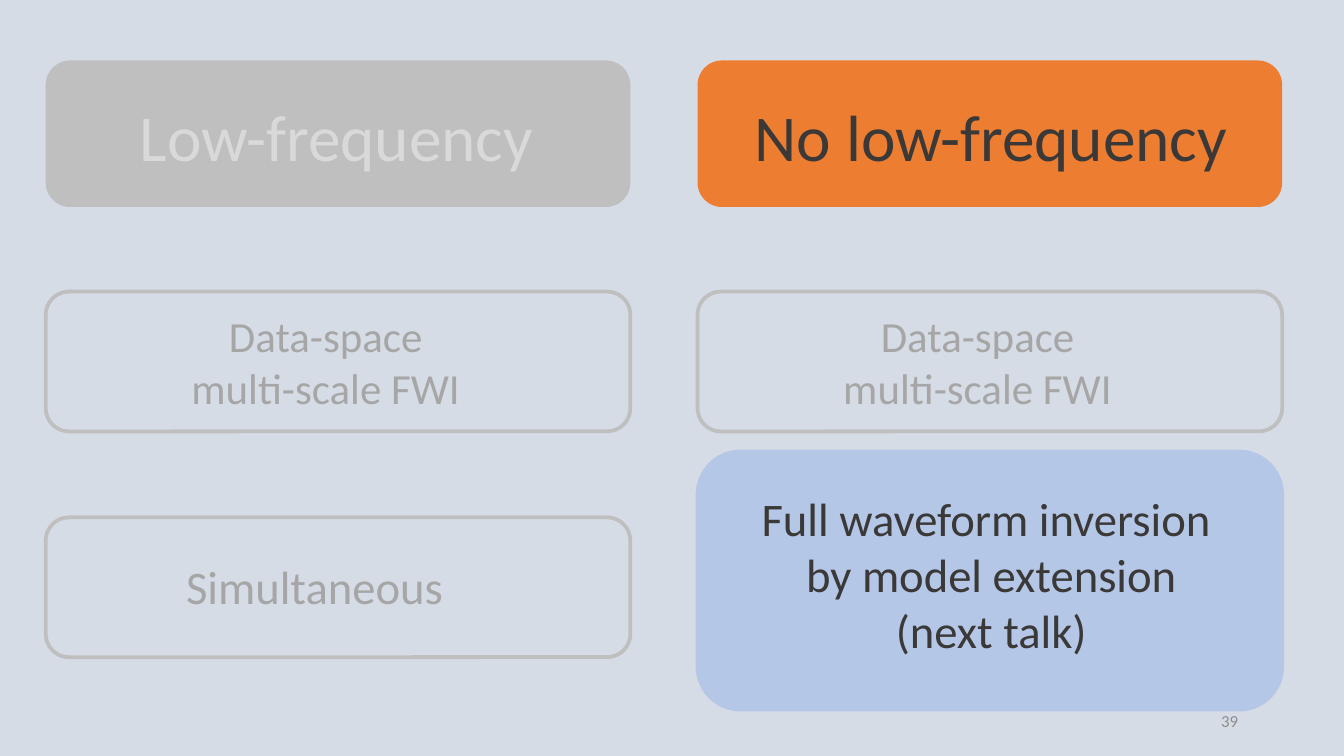
from pptx import Presentation
from pptx import util as u
from pptx.dml.color import RGBColor
from pptx.enum import shapes, text

HUES = {"back": "D6DCE5", "gray": "BFBFBF", "pale": "D9D9D9", "mute": "A6A6A6",
        "dark": "3B3838", "warm": "ED7D31", "blue": "B4C7E7", "page": "8C8C8C"}
LEFT, STEP, WIDTH = 0.34, 4.85, 4.35
TOP, HEAD, CARD = 0.45, 1.09, 1.04
ROWS = [2.17, 3.85]

deck = Presentation()
deck.slide_width = u.Inches(10)
deck.slide_height = deck.slide_width * 9 // 16
slide = deck.slides.add_slide(deck.slide_layouts[6])
slide.background.fill.solid()
slide.background.fill.fore_color.rgb = RGBColor.from_string(HUES["back"])


def panel(col, y, high, fill=None, line=None):
    box = slide.shapes.add_shape(
        shapes.MSO_SHAPE.ROUNDED_RECTANGLE, u.Inches(LEFT + col * STEP),
        u.Inches(y), u.Inches(WIDTH), u.Inches(high))
    box.shadow.inherit = False
    if fill:
        box.fill.solid()
        box.fill.fore_color.rgb = RGBColor.from_string(HUES[fill])
    else:
        box.fill.background()
    if line:
        box.line.color.rgb = RGBColor.from_string(HUES[line])
        box.line.width = u.Pt(2)
    else:
        box.line.fill.background()


def label(x, y, wide, high, lines, size, hue, side=text.PP_ALIGN.CENTER):
    frame = slide.shapes.add_textbox(
        u.Inches(x), u.Inches(y), u.Inches(wide), u.Inches(high)).text_frame
    frame.word_wrap = True
    frame.vertical_anchor = text.MSO_ANCHOR.MIDDLE
    frame.text = "\n".join(lines)
    for para in frame.paragraphs:
        para.alignment = side
        para.font.name = "Calibri"
        para.font.size = u.Pt(size)
        para.font.color.rgb = RGBColor.from_string(HUES[hue])


heads = [("Low-frequency", "gray", "pale", 0.08),
         ("No low-frequency", "warm", "dark", 0.1)]
for col, (name, fill, hue, inset) in enumerate(heads):
    x = LEFT + col * STEP
    panel(col, TOP, HEAD, fill)
    label(x + inset, 0.66, 4.17, 0.69, [name], 35, hue)
    panel(col, ROWS[0], CARD, line="gray")
    label(x + 0.23, ROWS[0] + 0.08, 3.71, 0.88,
          ["Data-space", "multi-scale FWI"], 23, "mute")

panel(0, ROWS[1], CARD, line="gray")
label(0.56, 4.1, 3.56, 0.52, ["Simultaneous"], 25, "mute")

panel(1, 3.36, 1.92, "blue", "blue")
label(5.2, 3.59, WIDTH, 1.36,
      ["Full waveform inversion ", "by model extension", "(next talk)"], 25, "dark")
label(7.06, 5.21, 2.25, 0.3, ["39"], 9, "page", text.PP_ALIGN.RIGHT)

deck.save("out.pptx")
